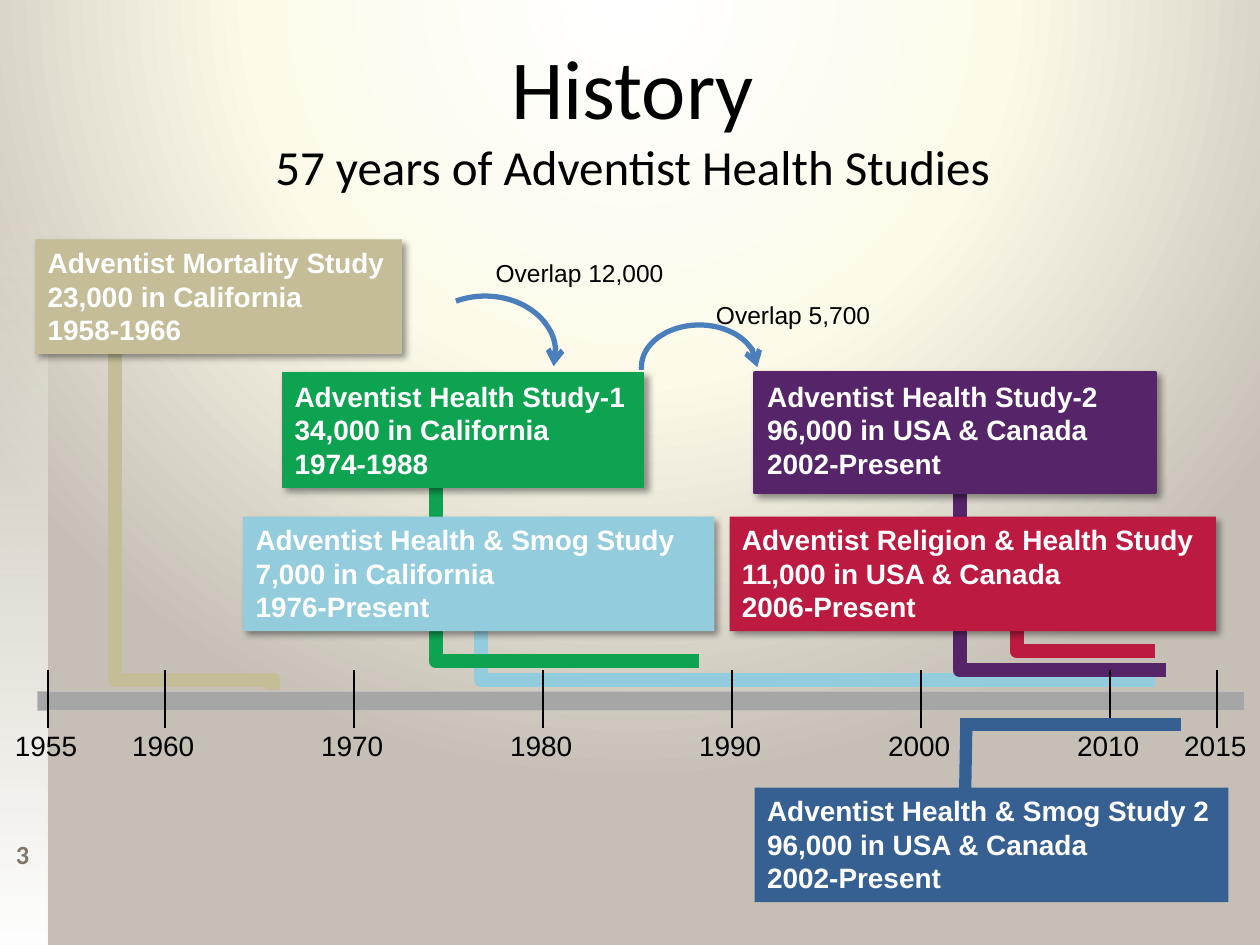
from lxml.etree import SubElement
from pptx import Presentation
from pptx.dml.color import RGBColor
from pptx.enum.shapes import MSO_CONNECTOR, MSO_SHAPE
from pptx.enum.text import MSO_ANCHOR, MSO_AUTO_SIZE, PP_ALIGN
from pptx.oxml import parse_xml
from pptx.oxml.ns import nsdecls, qn
from pptx.util import Inches, Pt

BLACK, WHITE = "000000", "FFFFFF"
BEIGE, GREEN, PURPLE = "C4BD97", "0DA351", "562569"
SKY, RED, NAVY, ARROW_BLUE = "93CDDD", "BC1A41", "376092", "4B7EBC"


def color(value):
    """Return the colour for a hex string."""
    return RGBColor.from_string(value)


def set_attributes(target, values):
    """Set every attribute named in a dict on the target."""
    for name, value in values.items():
        setattr(target, name, value)


def set_gradient(element, stops, direction):
    """Replace the solid fill under an element by a gradient."""
    stop_xml = "".join(
        f'<a:gs pos="{position * 1000}"><a:srgbClr val="{value}">'
        f'<a:alpha val="{alpha * 1000}"/></a:srgbClr></a:gs>'
        for position, value, alpha in stops
    )
    gradient = parse_xml(
        f'<a:gradFill {nsdecls("a")} rotWithShape="1">'
        f"<a:gsLst>{stop_xml}</a:gsLst>{direction}</a:gradFill>"
    )
    solid = element.find(".//" + qn("a:solidFill"))
    solid.getparent().replace(solid, gradient)


def write_text(shape, lines, size, text_color=BLACK, name="Arial", bold=False,
               align=PP_ALIGN.LEFT, anchor=MSO_ANCHOR.TOP, wrap=True):
    """Write lines as paragraphs; a size list gives one size per line."""
    frame = shape.text_frame
    set_attributes(frame, {"auto_size": MSO_AUTO_SIZE.NONE, "word_wrap": wrap,
                           "vertical_anchor": anchor})
    frame.text = "\n".join(lines)
    sizes = size if isinstance(size, list) else [size] * len(lines)
    for paragraph, points in zip(frame.paragraphs, sizes):
        set_attributes(paragraph, {"alignment": align, "space_before": Pt(0)})
        set_attributes(paragraph.font, {"name": name, "size": Pt(points), "bold": bold})
        paragraph.font.color.rgb = color(text_color)


def add_label(slide, box, text, size, **text_format):
    """Add a centred one-line label."""
    label = slide.shapes.add_textbox(*map(Inches, box))
    write_text(label, [text], size, align=PP_ALIGN.CENTER, wrap=False, **text_format)


def add_box(slide, box, fill, line=None, width=0.75):
    """Add a filled rectangle with an optional outline."""
    shape = slide.shapes.add_shape(MSO_SHAPE.RECTANGLE, *map(Inches, box))
    shape.shadow.inherit = False
    shape.fill.solid()
    shape.fill.fore_color.rgb = color(fill)
    if line:
        shape.line.color.rgb = color(line)
        shape.line.width = Pt(width)
    else:
        shape.line.fill.background()
    return shape


def add_line(slide, start, end, line, width, kind=MSO_CONNECTOR.STRAIGHT):
    """Add a connector without shadow."""
    points = map(Inches, (*start, *end))
    connector = slide.shapes.add_connector(kind, *points)
    connector.line.color.rgb = color(line)
    connector.line.width = Pt(width)
    SubElement(connector._element.spPr, qn("a:effectLst"))
    return connector


def add_elbow(slide, start, end, line, bend, upright=False):
    """Add a thick bent connector that marks the years of a study."""
    connector = add_line(slide, start, end, line, 8, MSO_CONNECTOR.ELBOW)
    properties = connector._element.spPr
    guides = properties.find(qn("a:prstGeom")).get_or_add_avLst()
    SubElement(guides, qn("a:gd"), name="adj1", fmla=f"val {round(bend * 100000)}")
    if upright:
        properties.xfrm.set("rot", "16200000")
        properties.xfrm.set("flipH", "1")


def add_study(slide, box, fill, lines, outline=None, width=0.75, shadow=True):
    """Add a study card with its name, size and period."""
    card = add_box(slide, box, fill, outline, width)
    write_text(card, lines, 16, WHITE, bold=True)
    if shadow:
        effects = card._element.spPr.find(qn("a:effectLst"))
        effects.append(parse_xml(
            f'<a:outerShdw {nsdecls("a")} blurRad="50800" dist="38100" dir="2700000" '
            'algn="tl" rotWithShape="0"><a:srgbClr val="000000">'
            '<a:alpha val="40000"/></a:srgbClr></a:outerShdw>'))


def add_overlap(slide, box, angles, label_box, text):
    """Add a curved arrow between two studies and its label."""
    arc = slide.shapes.add_shape(MSO_SHAPE.ARC, *map(Inches, box))
    arc.shadow.inherit = False
    arc.fill.background()
    for index, angle in enumerate(angles):
        arc.adjustments[index] = angle
    arc.line.color.rgb = color(ARROW_BLUE)
    arc.line.width = Pt(3)
    SubElement(arc._element.spPr.find(qn("a:ln")), qn("a:tailEnd"), type="arrow")
    add_label(slide, label_box, text, 14)


def add_backdrop(slide):
    """Add the background glow, the side strip and the slide number."""
    slide.background.fill.solid()
    set_gradient(
        slide.element, [(0, WHITE, 100), (48, "FDFAEA", 100), (100, "C5BFB5", 100)],
        '<a:path path="circle">'
        '<a:fillToRect l="50000" t="-80000" r="50000" b="180000"/></a:path>')
    strip = add_box(slide, (0, 0, 0.38, 7.5), WHITE)
    set_gradient(strip._element, [(0, WHITE, 100), (78, "FDFAEA", 0)],
                 '<a:lin ang="16200000" scaled="0"/>')
    add_label(slide, (-0.05, 6.58, 0.46, 0.4), "3", 15, text_color="827567",
              name="Calibri", bold=True, anchor=MSO_ANCHOR.MIDDLE)


def add_title(slide, box):
    """Place and format the title placeholder."""
    title = slide.shapes.title
    set_attributes(title, dict(zip(("left", "top", "width", "height"), map(Inches, box))))
    write_text(title, ["History", "57 years of Adventist Health Studies"], [48, 28],
               name="Calibri", align=PP_ALIGN.CENTER)


def add_timeline(slide, box):
    """Add the time axis with its ticks and years."""
    top = box[1]
    add_box(slide, box, "A6A6A6", "BFBFBF")
    ticks = {1955: 0.38, 2015: 9.66}
    ticks.update({year: 1.31 + 0.15 * (year - 1960) for year in range(1960, 2011, 10)})
    for year, x in ticks.items():
        add_line(slide, (x, top - 0.17), (x, top + 0.29), BLACK, 1.5)
        add_label(slide, (x - 0.36, top + 0.24, 0.69, 0.37), str(year), 16)


def main():
    """Build and save the slide."""
    presentation = Presentation()
    presentation.slide_width, presentation.slide_height = Inches(10), Inches(7.5)
    slide = presentation.slides.add_slide(presentation.slide_layouts[5])
    add_backdrop(slide)
    add_title(slide, (0.27, 0.23, 9.5, 1.52))

    add_elbow(slide, (3.82, 4.93), (9.17, 5.4), SKY, 0)
    add_elbow(slide, (7.6, 3.91), (9.25, 5.32), PURPLE, 0.01)
    add_elbow(slide, (8.07, 4.93), (9.17, 5.17), RED, 0)
    add_elbow(slide, (0.16, 3.47), (2.92, 4.73), BEIGE, 0.97, upright=True)
    add_elbow(slide, (3.5, 3.75), (5.55, 5.25), GREEN, -0.02)
    add_timeline(slide, (0.3, 5.49, 9.58, 0.15))

    add_study(slide, (0.28, 1.9, 2.91, 0.91), BEIGE,
              ["Adventist Mortality Study", "23,000 in California", "1958-1966"])
    add_study(slide, (2.24, 2.96, 2.87, 0.91), GREEN,
              ["Adventist Health Study-1", "34,000 in California", "1974-1988"], GREEN)
    add_study(slide, (5.99, 2.96, 3.18, 0.95), PURPLE,
              ["Adventist Health Study-2", "96,000 in USA & Canada", "2002-Present"],
              PURPLE, 2)
    add_study(slide, (1.93, 4.1, 3.74, 0.91), SKY,
              ["Adventist Health & Smog Study", "7,000 in California", "1976-Present"])
    add_study(slide, (5.79, 4.1, 3.86, 0.91), RED,
              ["Adventist Religion & Health Study", "11,000 in USA & Canada",
               "2006-Present"])
    add_study(slide, (5.99, 6.25, 3.76, 0.91), NAVY,
              ["Adventist Health & Smog Study 2", "96,000 in USA & Canada",
               "2002-Present"], shadow=False)
    add_line(slide, (7.66, 6.29), (7.67, 5.72), NAVY, 7)
    add_line(slide, (7.62, 5.75), (9.37, 5.75), NAVY, 7)

    add_overlap(slide, (3.29, 2.35, 1.12, 0.9), (144.31, 6.71),
                (3.83, 2, 1.54, 0.34), "Overlap 12,000")
    add_overlap(slide, (5.09, 2.58, 0.92, 0.67), (106.44, 0),
                (5.58, 2.33, 1.43, 0.34), "Overlap 5,700")
    presentation.save("out.pptx")


if __name__ == "__main__":
    main()
